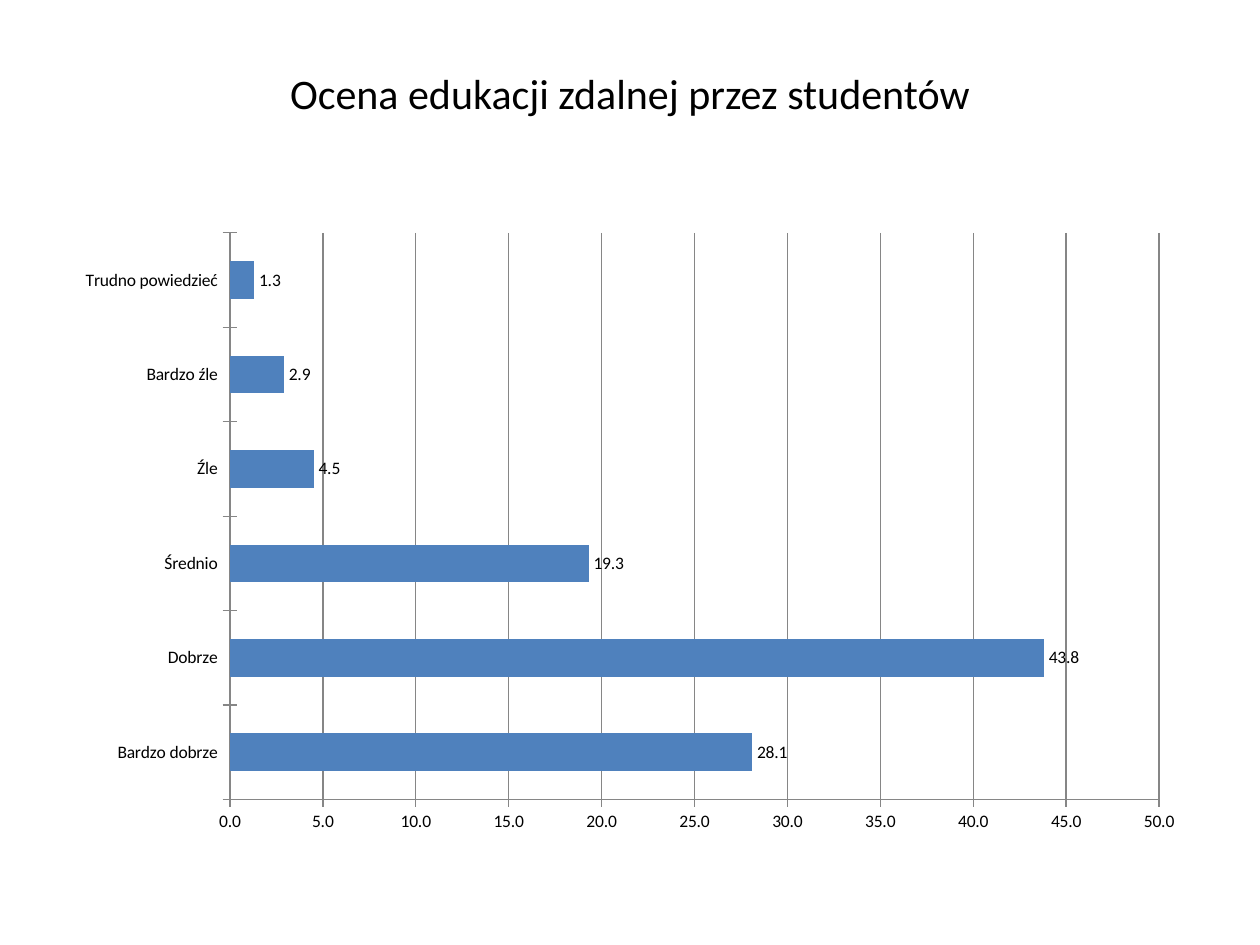
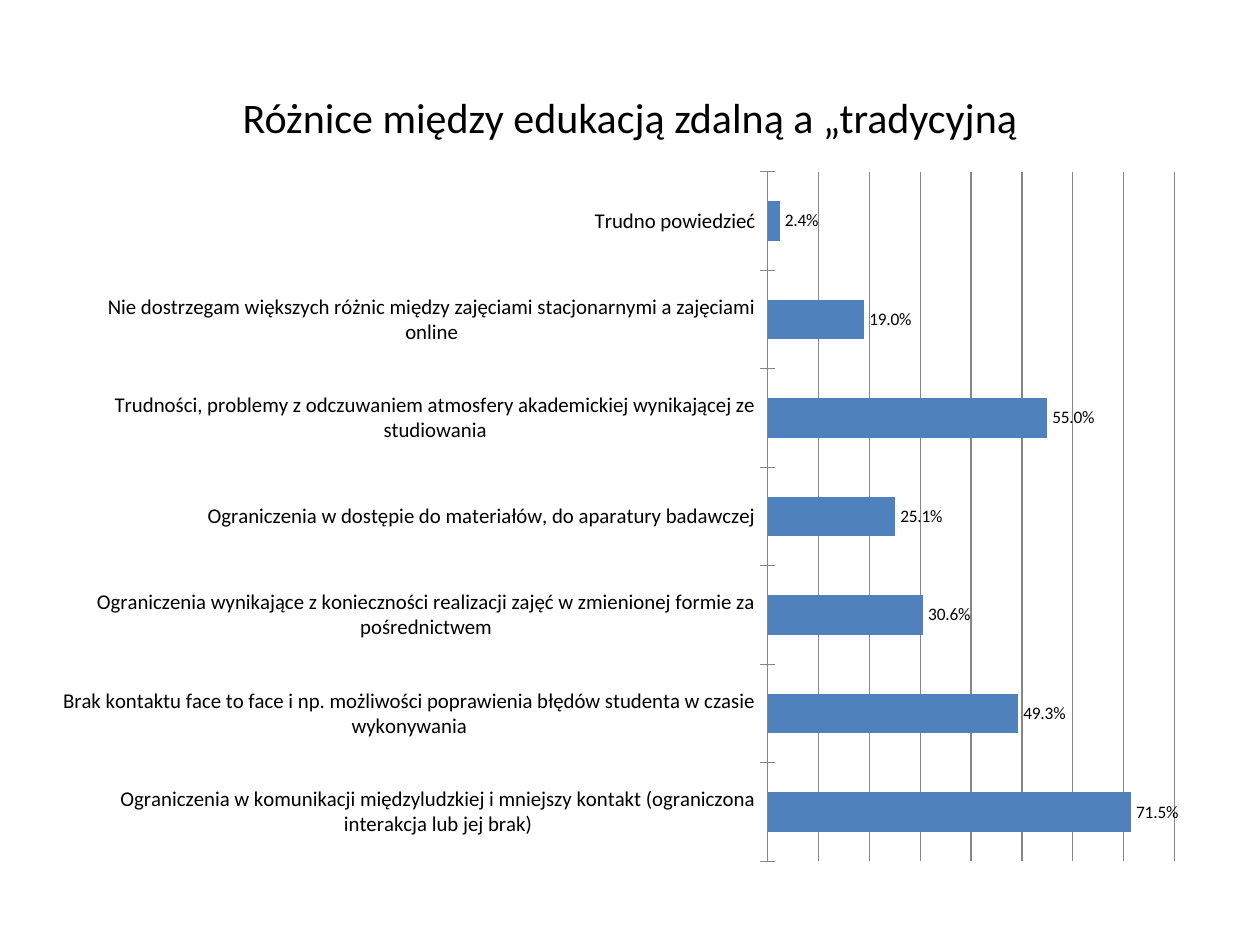
from dataclasses import dataclass

from pptx import Presentation
from pptx.chart.data import CategoryChartData
from pptx.dml.color import RGBColor
from pptx.enum.chart import XL_CHART_TYPE, XL_LABEL_POSITION, XL_TICK_MARK
from pptx.enum.text import MSO_ANCHOR, PP_ALIGN
from pptx.util import Inches, Pt

BAR_CLUSTERED = XL_CHART_TYPE.BAR_CLUSTERED
OUTSIDE_END = XL_LABEL_POSITION.OUTSIDE_END
CROSS = XL_TICK_MARK.CROSS
MIDDLE = MSO_ANCHOR.MIDDLE
CENTER = PP_ALIGN.CENTER


@dataclass(frozen=True)
class Theme:
    font: str = "Calibri"
    text: RGBColor = RGBColor(0x00, 0x00, 0x00)
    bar: RGBColor = RGBColor(0x4F, 0x81, 0xBD)
    line: RGBColor = RGBColor(0x86, 0x86, 0x86)
    title_size: Pt = Pt(24)
    chart_size: Pt = Pt(10)
    line_width: Pt = Pt(0.75)
    left: Inches = Inches(0.5)
    width: Inches = Inches(9)


THEME = Theme()

# Survey results, listed from the bottom bar upwards
surveys = [
    {
        "title": "Ocena edukacji zdalnej przez studentów",
        "title_top": 0.3, "title_height": 0.87,
        "chart_top": 1.75, "chart_height": 4.95,
        "format": "###0.0", "maximum": 50, "step": 5,
        "show_scale": True, "answer_size": Pt(10),
        "answers": {
            "Bardzo dobrze": 28.1,
            "Dobrze": 43.8,
            "Średnio": 19.3,
            "Źle": 4.5,
            "Bardzo źle": 2.9,
            "Trudno powiedzieć": 1.3,
        },
    },
    {
        "title": "Różnice między edukacją zdalną a „tradycyjną",
        "title_top": 0.3, "title_height": 1.25,
        "chart_top": 1.25, "chart_height": 5.7,
        "format": "###0.0%", "maximum": 0.8, "step": 0.1,
        "show_scale": False, "answer_size": Pt(12),
        "answers": {
            "Ograniczenia w komunikacji międzyludzkiej i mniejszy kontakt "
            "(ograniczona interakcja lub jej brak)": 0.715,
            "Brak kontaktu face to face i np. możliwości poprawienia błędów "
            "studenta w czasie wykonywania": 0.493,
            "Ograniczenia wynikające z konieczności realizacji zajęć "
            "w zmienionej formie za pośrednictwem": 0.306,
            "Ograniczenia w dostępie do materiałów, do aparatury badawczej": 0.251,
            "Trudności, problemy z odczuwaniem atmosfery akademickiej "
            "wynikającej ze studiowania": 0.55,
            "Nie dostrzegam większych różnic między zajęciami stacjonarnymi "
            "a zajęciami online": 0.19,
            "Trudno powiedzieć": 0.024,
        },
    },
]


def style_font(font, size):
    font.name = THEME.font
    font.size = size
    font.color.rgb = THEME.text


def style_line(line):
    line.color.rgb = THEME.line
    line.width = THEME.line_width


prs = Presentation()
prs.slide_width = Inches(10)
prs.slide_height = Inches(7.5)
title_only = prs.slide_layouts.get_by_name("Title Only")

for survey in surveys:
    slide = prs.slides.add_slide(title_only)

    # Title
    title = slide.shapes.title
    title.left, title.width = THEME.left, THEME.width
    title.top = Inches(survey["title_top"])
    title.height = Inches(survey["title_height"])
    title.text_frame.vertical_anchor = MIDDLE
    heading = title.text_frame.paragraphs[0]
    heading.alignment = CENTER
    run = heading.add_run()
    run.text = survey["title"]
    style_font(run.font, THEME.title_size)

    # Bar chart
    results = CategoryChartData(number_format=survey["format"])
    results.categories = list(survey["answers"])
    results.add_series("Series 1", list(survey["answers"].values()))
    chart = slide.shapes.add_chart(
        BAR_CLUSTERED, THEME.left, Inches(survey["chart_top"]),
        THEME.width, Inches(survey["chart_height"]), results).chart
    chart.has_title = False
    chart.has_legend = False
    style_font(chart.font, THEME.chart_size)

    # Bars and their values
    plot = chart.plots[0]
    plot.vary_by_categories = False
    plot.gap_width = 150
    bars = plot.series[0]
    bars.format.fill.solid()
    bars.format.fill.fore_color.rgb = THEME.bar
    plot.has_data_labels = True
    labels = plot.data_labels
    labels.show_value = True
    labels.position = OUTSIDE_END
    labels.number_format = survey["format"]
    labels.number_format_is_linked = False
    style_font(labels.font, THEME.chart_size)

    # Axes and gridlines
    answer_axis, scale = chart.category_axis, chart.value_axis
    for axis in (answer_axis, scale):
        axis.major_tick_mark = CROSS
        style_line(axis.format.line)
    style_font(answer_axis.tick_labels.font, survey["answer_size"])
    scale.minimum_scale = 0
    scale.maximum_scale = survey["maximum"]
    scale.major_unit = survey["step"]
    scale.visible = survey["show_scale"]
    scale.tick_labels.number_format = survey["format"]
    scale.tick_labels.number_format_is_linked = False
    scale.has_major_gridlines = True
    style_line(scale.major_gridlines.format.line)

prs.save("out.pptx")
